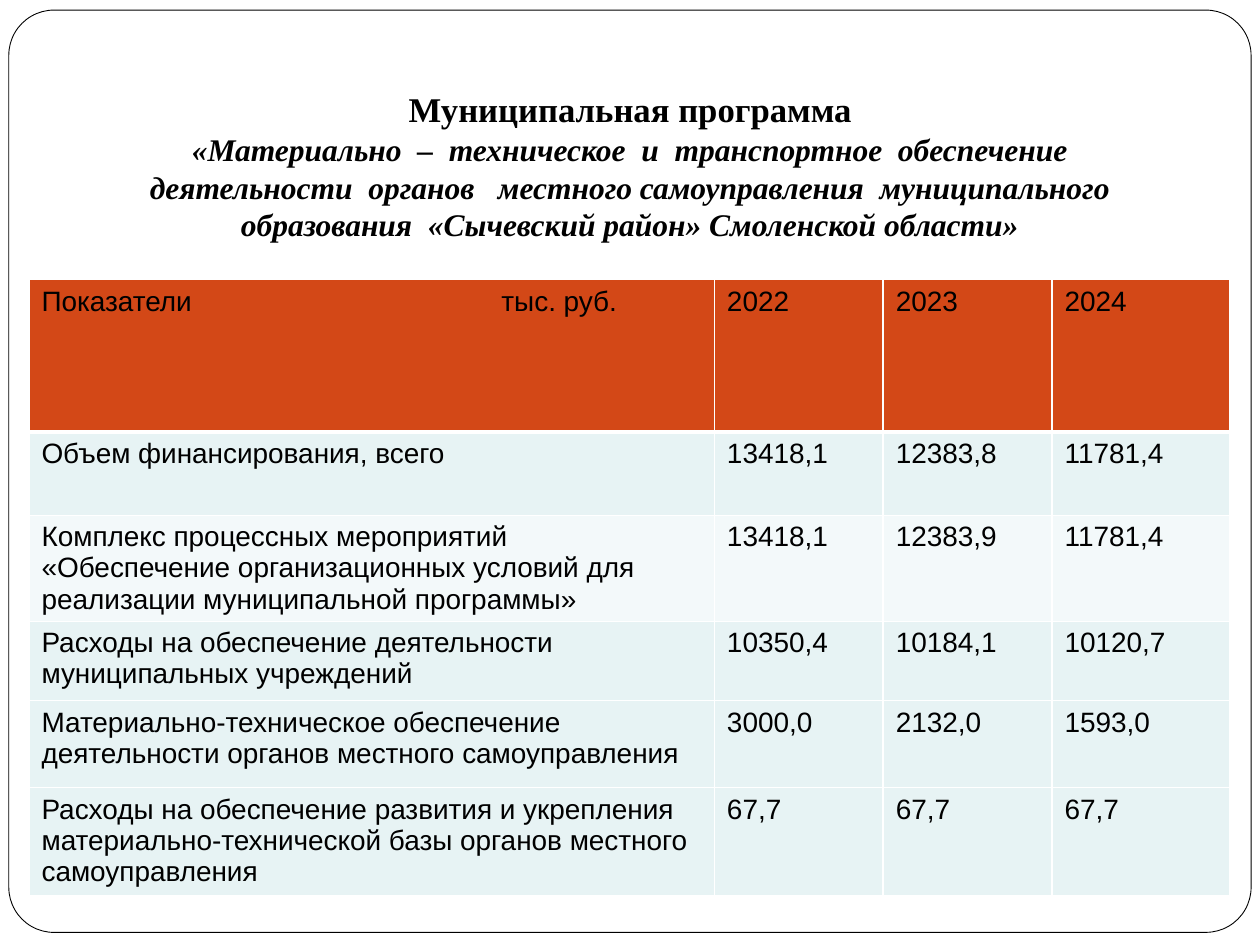
from lxml import etree
from pptx import Presentation, util as u
from pptx.dml.color import RGBColor
from pptx.enum import shapes, text
from pptx.oxml.ns import qn

COLORS = {"paper": "FFFFFF", "ink": "000000", "header": "D34817",
          "band": "E7F3F4", "pale": "F3F9FA"}
TITLE = [
    ("Муниципальная программа", 19.8, False),
    ("«Материально  –  техническое  и  транспортное  обеспечение", 18, True),
    ("деятельности  органов   местного самоуправления  муниципального", 18, True),
    ("образования  «Сычевский район» Смоленской области»", 18, True),
]
# height, fill, cells
ROWS = [
    (1.21, "header", ["Показатели\tтыс. руб.", "2022", "2023", "2024"]),
    (0.66, "band", ["Объем финансирования, всего", "13418,1", "12383,8", "11781,4"]),
    (0.84, "pale", ["Комплекс процессных мероприятий «Обеспечение организационных "
                    "условий для реализации муниципальной программы»",
                    "13418,1", "12383,9", "11781,4"]),
    (0.63, "band", ["Расходы на обеспечение деятельности муниципальных учреждений",
                    "10350,4", "10184,1", "10120,7"]),
    (0.69, "band", ["Материально-техническое обеспечение деятельности органов "
                    "местного самоуправления", "3000,0", "2132,0", "1593,0"]),
    (0.86, "band", ["Расходы на обеспечение развития и укрепления "
                    "материально-технической базы органов местного самоуправления",
                    "67,7", "67,7", "67,7"]),
]
COLUMNS = [5.44, 1.34, 1.34, 1.41]
UNIT_TAB = 3.65


def rgb(name):
    return RGBColor.from_string(COLORS[name])


def inches(*values):
    return [u.Inches(v) for v in values]


def set_font(font, **values):
    for key, value in values.items():
        setattr(font, key, value)
    font.color.rgb = rgb("ink")


def add_frame(s):
    """Add the rounded page outline behind everything else."""
    sp = s.shapes.add_shape(shapes.MSO_SHAPE.ROUNDED_RECTANGLE,
                            *inches(0.07, 0.08, 9.86, 7.32))
    sp.adjustments[0] = 0.049
    sp.shadow.inherit = False
    sp.fill.solid()
    sp.fill.fore_color.rgb = rgb("paper")
    sp.line.color.rgb = rgb("ink")
    sp.line.width = u.Pt(0.5)
    s.shapes._spTree.insert(2, sp._element)


def fill_title(sp):
    sp.left, sp.top, sp.width, sp.height = inches(0.5, 0.3, 9, 1.73)
    tf = sp.text_frame
    tf.auto_size = text.MSO_AUTO_SIZE.NONE
    tf.word_wrap = True
    tf.vertical_anchor = text.MSO_ANCHOR.BOTTOM
    tf.margin_left, tf.margin_top, tf.margin_right, tf.margin_bottom = inches(
        0.1, 0.05, 0.1, 0.1)
    p = tf.paragraphs[0]
    p.alignment = text.PP_ALIGN.CENTER
    for i, (line, size, italic) in enumerate(TITLE):
        if i:
            p.add_line_break()
        r = p.add_run()
        r.text = line
        set_font(r.font, name="Times New Roman", size=u.Pt(size), bold=True, italic=italic)


def set_borders(cell, widths):
    """Draw cell borders; they must precede the fill in the XML."""
    tcPr = cell._tc.get_or_add_tcPr()
    for i, (side, width) in enumerate(widths.items()):
        ln = etree.Element(qn(f"a:ln{side}"), w=str(u.Pt(width)))
        fill = etree.SubElement(ln, qn("a:solidFill"))
        etree.SubElement(fill, qn("a:srgbClr"), val=COLORS["paper"])
        tcPr.insert(i, ln)


def add_budget_table(s):
    height = sum(row[0] for row in ROWS)
    table = s.shapes.add_table(len(ROWS), len(COLUMNS),
                               *inches(0.23, 2.22, sum(COLUMNS), height)).table
    for column, width in zip(table.columns, COLUMNS):
        column.width = u.Inches(width)
    for i, (row_height, color, values) in enumerate(ROWS):
        table.rows[i].height = u.Inches(row_height)
        borders = {"L": 1, "R": 1, "T": 3 if i == 1 else 1, "B": 3 if i == 0 else 1}
        for j, value in enumerate(values):
            cell = table.cell(i, j)
            cell.fill.solid()
            cell.fill.fore_color.rgb = rgb(color)
            set_borders(cell, borders)
            p = cell.text_frame.paragraphs[0]
            if "\t" in value:
                tabs = etree.SubElement(p._p.get_or_add_pPr(), qn("a:tabLst"))
                etree.SubElement(tabs, qn("a:tab"), pos=str(u.Inches(UNIT_TAB)), algn="l")
            r = p.add_run()
            r.text = value
            set_font(r.font, name="Arial", size=u.Pt(16), bold=False)


def main():
    prs = Presentation()
    prs.slide_width, prs.slide_height = inches(10, 7.5)
    s = prs.slides.add_slide(prs.slide_layouts[5])
    add_frame(s)
    fill_title(s.shapes.title)
    add_budget_table(s)
    prs.save("out.pptx")


if __name__ == "__main__":
    main()
